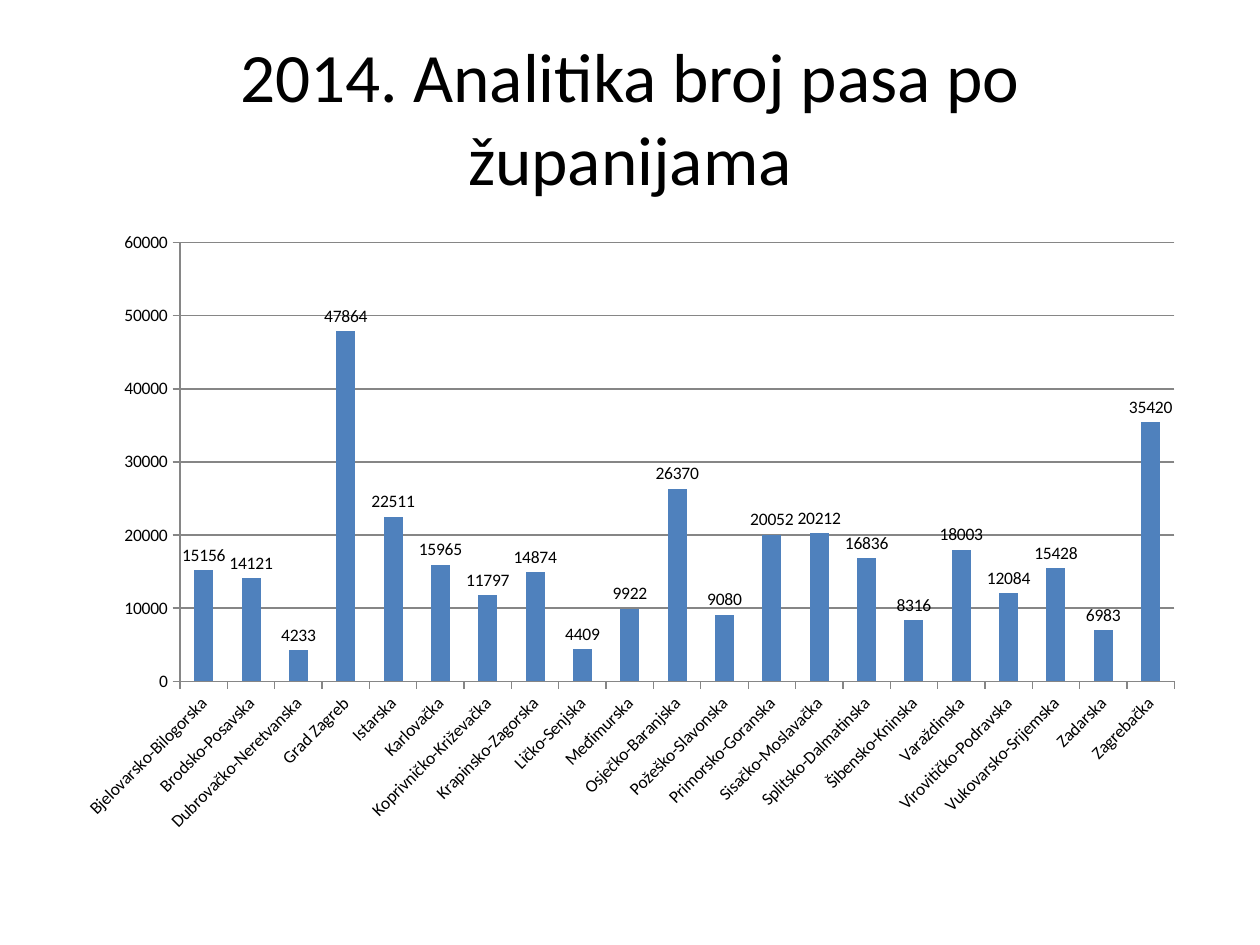
from typing import NamedTuple

from pptx import Presentation
from pptx.chart.data import CategoryChartData
from pptx.dml.color import RGBColor
from pptx.enum.chart import XL_CHART_TYPE, XL_LABEL_POSITION, XL_TICK_MARK
from pptx.enum.text import MSO_ANCHOR, PP_ALIGN
from pptx.util import Inches, Pt

FONT = "Calibri"
COLORS = {"text": "000000", "bar": "4F81BD", "line": "868686"}
WIDTH, HEIGHT = Inches(10), Inches(7.5)


class Box(NamedTuple):
    """Place and size as shares of the slide."""
    left: float
    top: float
    width: float
    height: float

    def lengths(self) -> tuple[int, int, int, int]:
        return (round(self.left * WIDTH), round(self.top * HEIGHT),
                round(self.width * WIDTH), round(self.height * HEIGHT))


class County(NamedTuple):
    name: str
    dogs: int


TITLE_BOX = Box(0.05, 0.04, 0.9, 1 / 6)
CHART_BOX = Box(0.05, 7 / 30, 0.9, 0.66)
COUNTIES = [
    County("Bjelovarsko-Bilogorska", 15156),
    County("Brodsko-Posavska", 14121),
    County("Dubrovačko-Neretvanska", 4233),
    County("Grad Zagreb", 47864),
    County("Istarska", 22511),
    County("Karlovačka", 15965),
    County("Koprivničko-Križevačka", 11797),
    County("Krapinsko-Zagorska", 14874),
    County("Ličko-Senjska", 4409),
    County("Međimurska", 9922),
    County("Osječko-Baranjska", 26370),
    County("Požeško-Slavonska", 9080),
    County("Primorsko-Goranska", 20052),
    County("Sisačko-Moslavačka", 20212),
    County("Splitsko-Dalmatinska", 16836),
    County("Šibensko-Kninska", 8316),
    County("Varaždinska", 18003),
    County("Virovitičko-Podravska", 12084),
    County("Vukovarsko-Srijemska", 15428),
    County("Zadarska", 6983),
    County("Zagrebačka", 35420),
]


def color(name: str) -> RGBColor:
    return RGBColor.from_string(COLORS[name])


def style_font(font, size: float) -> None:
    font.name = FONT
    font.size = Pt(size)
    font.color.rgb = color("text")


def style_line(line) -> None:
    line.color.rgb = color("line")
    line.width = Pt(0.75)


def add_title(slide, text: str, box: Box) -> None:
    frame = slide.shapes.add_textbox(*box.lengths()).text_frame
    frame.word_wrap = True
    frame.vertical_anchor = MSO_ANCHOR.MIDDLE
    paragraph = frame.paragraphs[0]
    paragraph.text = text
    paragraph.alignment = PP_ALIGN.CENTER
    style_font(paragraph.font, 39.6)


def add_county_chart(slide, counties: list[County], box: Box) -> None:
    data = CategoryChartData()
    data.categories = [county.name for county in counties]
    data.add_series("Series 1", [county.dogs for county in counties])
    chart = slide.shapes.add_chart(
        XL_CHART_TYPE.COLUMN_CLUSTERED, *box.lengths(), data).chart
    chart.has_legend = False
    chart.has_title = False
    style_font(chart.font, 10)

    for axis in (chart.category_axis, chart.value_axis):
        axis.major_tick_mark = XL_TICK_MARK.OUTSIDE
        axis.minor_tick_mark = XL_TICK_MARK.NONE
        style_line(axis.format.line)
    # Slanted names: -45 degrees in 60000ths
    category_text = chart.category_axis.tick_labels.font
    style_font(category_text, 10)
    chart.category_axis._element.txPr.bodyPr.set("rot", str(-45 * 60000))

    values = chart.value_axis
    values.minimum_scale, values.maximum_scale = 0, 60000
    values.major_unit = 10000
    values.has_major_gridlines = True
    style_line(values.major_gridlines.format.line)

    plot = chart.plots[0]
    plot.gap_width = 150
    plot.vary_by_categories = False
    bars = plot.series[0]
    bars.format.fill.solid()
    bars.format.fill.fore_color.rgb = color("bar")
    labels = bars.data_labels
    labels.show_value = True
    labels.position = XL_LABEL_POSITION.OUTSIDE_END
    style_font(labels.font, 10)


def main() -> None:
    presentation = Presentation()
    presentation.slide_width, presentation.slide_height = WIDTH, HEIGHT
    slide = presentation.slides.add_slide(presentation.slide_layouts[6])
    add_title(slide, "2014. Analitika broj pasa po županijama", TITLE_BOX)
    add_county_chart(slide, COUNTIES, CHART_BOX)
    presentation.save("out.pptx")


if __name__ == "__main__":
    main()
